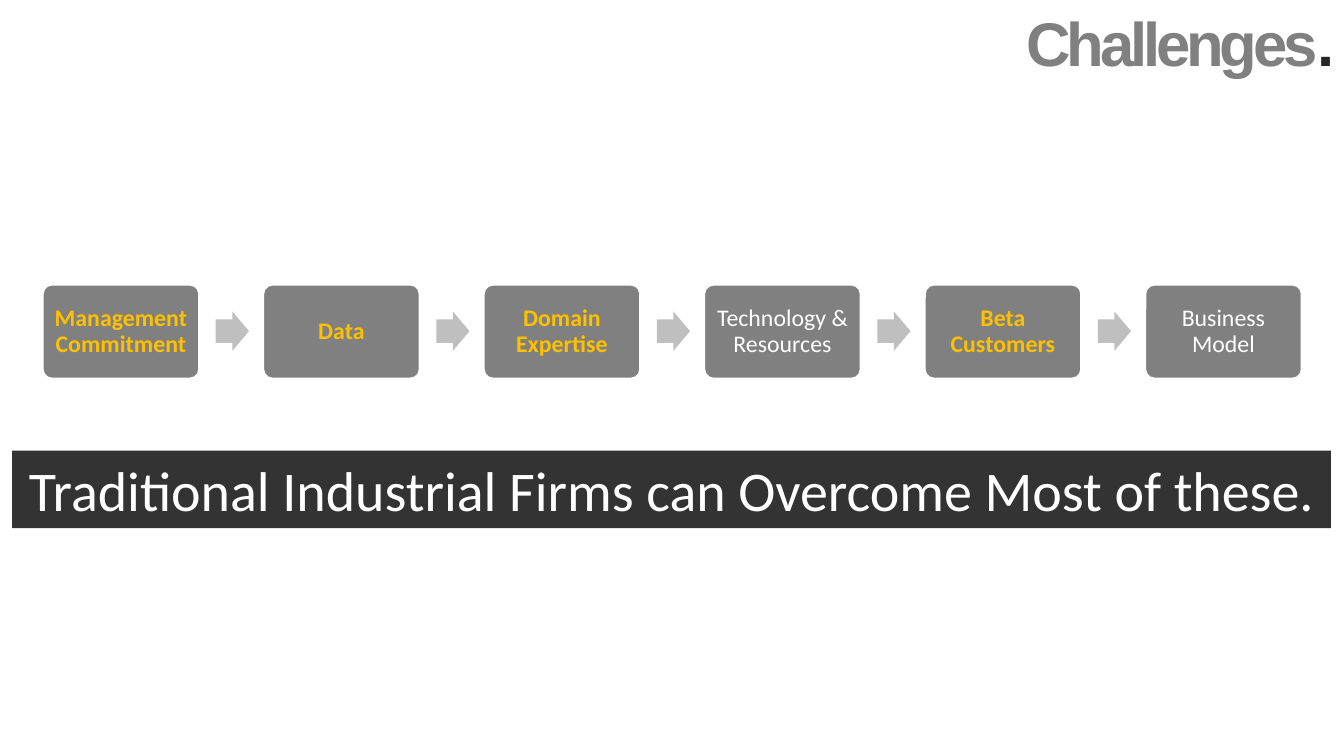
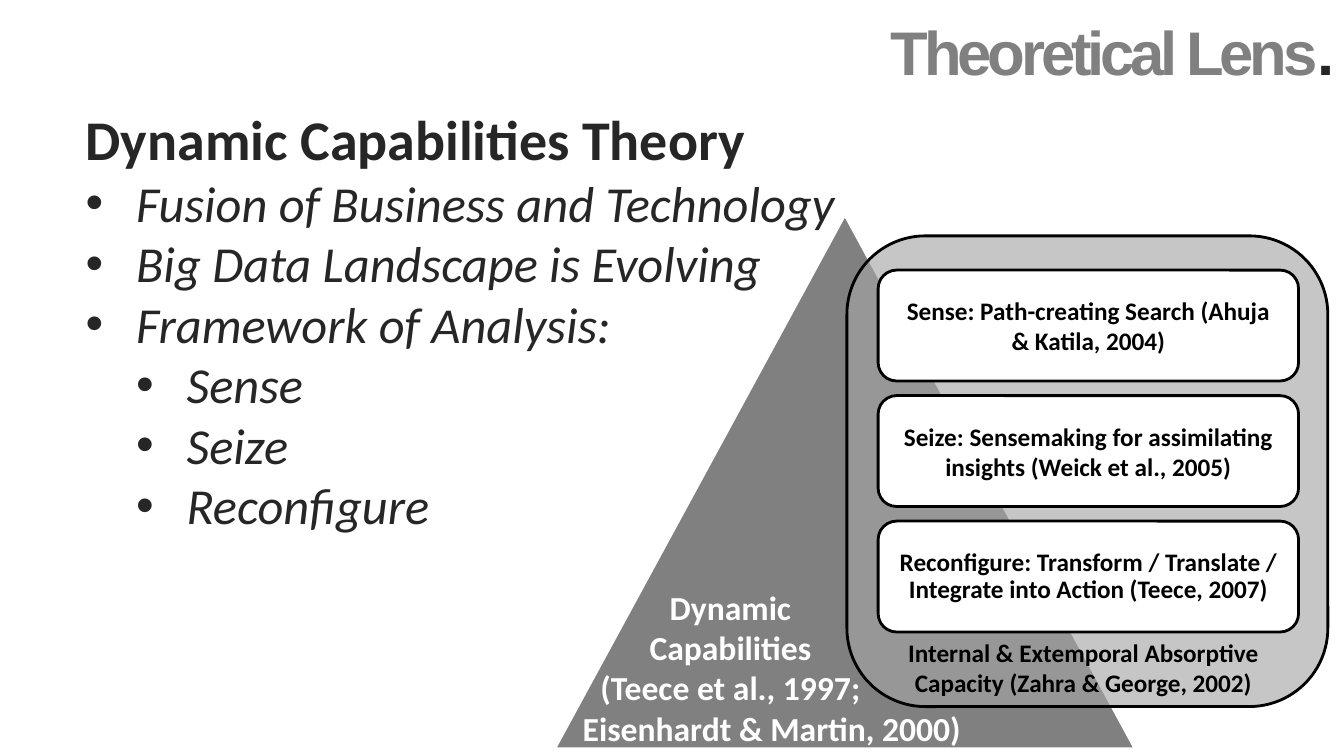
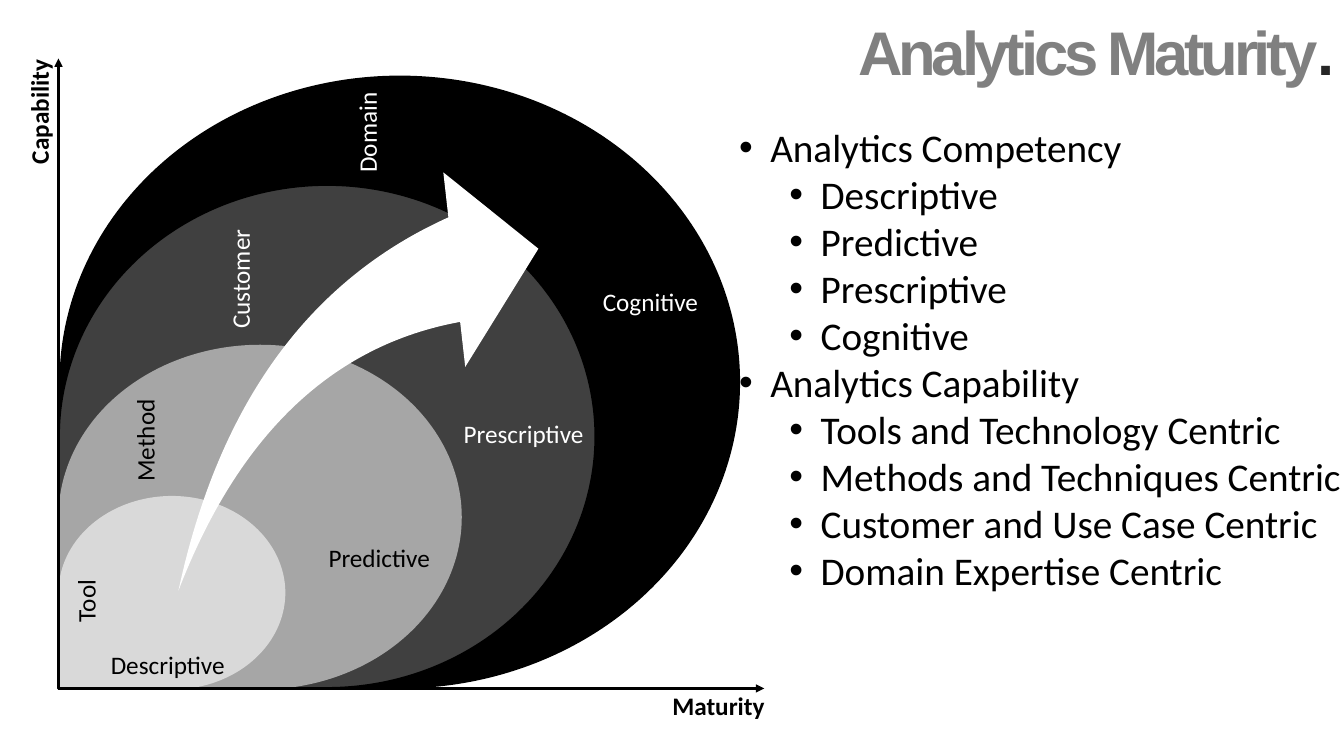
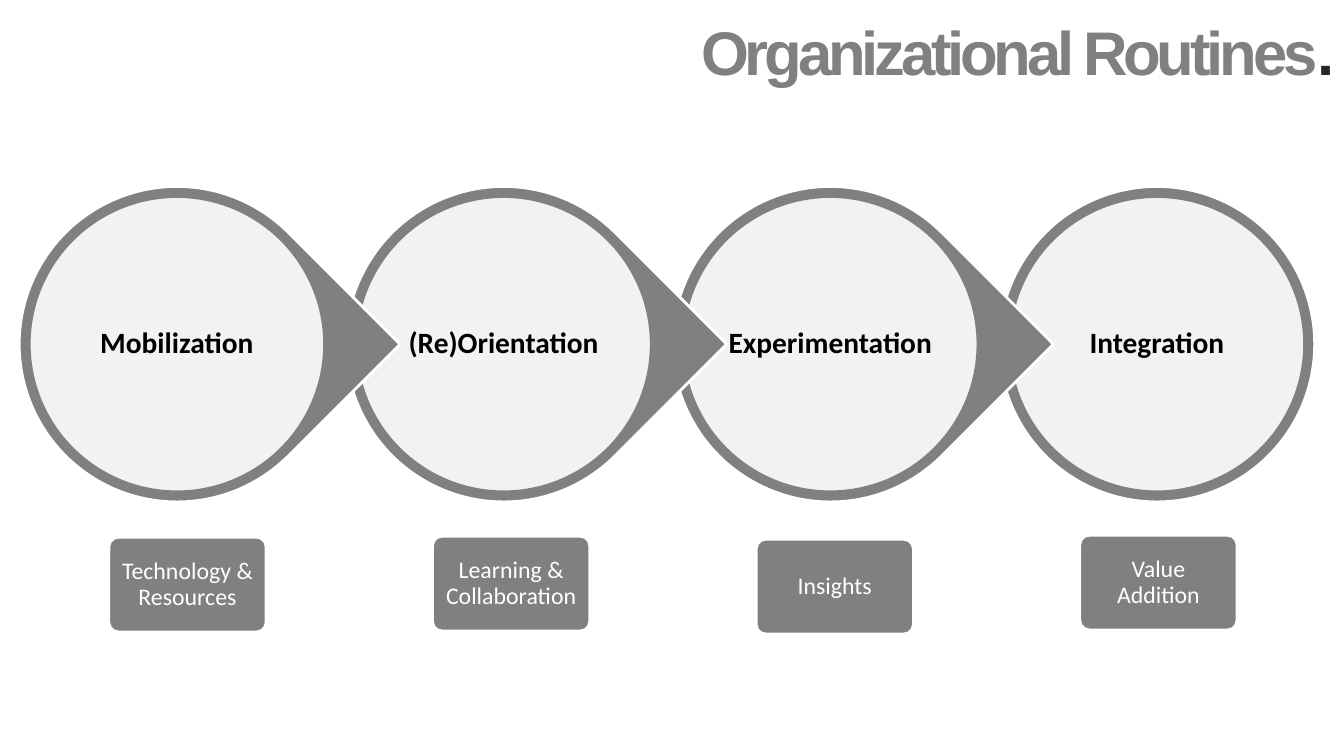
from lxml.etree import SubElement
from pptx import Presentation
from pptx.dml.color import RGBColor
from pptx.enum.shapes import MSO_CONNECTOR, MSO_SHAPE as SHAPE
from pptx.enum.text import MSO_ANCHOR as ANCHOR, MSO_AUTO_SIZE, PP_ALIGN as ALIGN
from pptx.oxml.ns import qn
from pptx.util import Inches, Pt

COLORS = {
    "white": "FFFFFF", "black": "000000", "ink": "262626", "grey": "808080",
    "silver": "BFBFBF", "panel": "A6A6A6", "charcoal": "404040",
    "pale": "D9D9D9", "gold": "FFC000",
}
RGB = {name: RGBColor.from_string(value) for name, value in COLORS.items()}

CHIP = {"size": Pt(17)}
CHIP_BOLD = {"size": Pt(17), "bold": True}
LABEL = {"size": Pt(18)}
LABEL_BOLD = {"size": Pt(18), "bold": True}
TITLE = {"size": Pt(44), "bold": True, "name": "Arial"}


def write(tf, lines, color, font, margin=None, **para):
    tf.auto_size = MSO_AUTO_SIZE.NONE
    if margin is not None:
        for side in ("left", "right", "top", "bottom"):
            setattr(tf, "margin_" + side, Inches(margin))
    for i, line in enumerate(lines):
        p = tf.paragraphs[0] if i == 0 else tf.add_paragraph()
        for key, value in para.items():
            setattr(p, key, value)
        r = p.add_run()
        r.text = line
        r.font.color.rgb = RGB[color]
        for key, value in {"name": "Calibri", **font}.items():
            setattr(r.font, key, value)


def add(s, kind, box, fill, line=None, alpha=None, adj=()):
    sp = s.shapes.add_shape(kind, *map(Inches, box))
    sp.shadow.inherit = False
    sp.fill.solid()
    sp.fill.fore_color.rgb = RGB[fill]
    if alpha:
        clr = sp.element.spPr.find(".//" + qn("a:srgbClr"))
        SubElement(clr, qn("a:alpha"), val=str(alpha * 1000))
    if line:
        sp.line.color.rgb = RGB[line]
        sp.line.width = Pt(2)
    else:
        sp.line.fill.background()
    for i, value in enumerate(adj):
        sp.adjustments[i] = value
    sp.text_frame.word_wrap = True
    return sp


prs = Presentation()
prs.slide_width, prs.slide_height = Inches(13.33), Inches(7.5)

slides = []
for title, layout, top in [
    ("Challenges", 5, 0),
    ("Theoretical Lens", 1, 0.08),
    ("Analytics Maturity", 1, 0.08),
    ("Organizational Routines", 5, 0.08),
]:
    s = prs.slides.add_slide(prs.slide_layouts[layout])
    sp = s.shapes.title
    sp.left, sp.top, sp.width, sp.height = map(Inches, (3.42, top, 9.92, 0.84))
    write(sp.text_frame, [title], "grey", TITLE, alignment=ALIGN.RIGHT)
    r = sp.text_frame.paragraphs[0].add_run()
    r.text = "."
    r.font.color.rgb = RGB["ink"]
    for key, value in TITLE.items():
        setattr(r.font, key, value)
    for r in sp.text_frame.paragraphs[0].runs:
        r.font._element.set("spc", "-300")
    slides.append(s)
challenges, lens, maturity, routines = slides

for s, box, color, size, indent, step, lines in [
    (lens, (0.75, 0.99, 10.83, 4.41), "ink", 36, 0.5, 0.5, [
        (None, "Dynamic Capabilities Theory"),
        (0, "Fusion of Business and Technology"),
        (0, "Big Data Landscape is Evolving"),
        (0, "Framework of Analysis:"),
        (1, "Sense"), (1, "Seize"), (1, "Reconfigure"),
    ]),
    (maturity, (7.23, 1.17, 6.24, 4.81), "black", 28, 0.31, 0.5, [
        (0, "Analytics Competency"),
        (1, "Descriptive"), (1, "Predictive"), (1, "Prescriptive"), (1, "Cognitive"),
        (0, "Analytics Capability"),
        (1, "Tools and Technology Centric"),
        (1, "Methods and Techniques Centric"),
        (1, "Customer and Use Case Centric"),
        (1, "Domain Expertise Centric"),
    ]),
]:
    sp = s.placeholders[1]
    sp.left, sp.top, sp.width, sp.height = map(Inches, box)
    tf = sp.text_frame
    write(tf, [text for _, text in lines], color,
          {"size": Pt(size), "italic": s is lens}, space_before=Pt(0))
    for p, (level, _) in zip(tf.paragraphs, lines):
        pPr = p._p.get_or_add_pPr()
        if level is None:
            for key, value in {"size": Pt(40), "bold": True, "italic": False}.items():
                setattr(p.runs[0].font, key, value)
            pPr.set("marL", "0")
            pPr.set("indent", "0")
            SubElement(pPr, qn("a:buNone"))
            continue
        p.level = level
        pPr.set("marL", str(Inches(indent + step * level)))
        pPr.set("indent", str(-Inches(indent)))
        SubElement(pPr, qn("a:buFont"), typeface="Arial")
        SubElement(pPr, qn("a:buChar"), char="•")

steps = [
    ("Management Commitment", True), ("Data", True), ("Domain Expertise", True),
    ("Technology & Resources", False), ("Beta Customers", True), ("Business Model", False),
]
chips = [(challenges, 0.42 + 2.187 * i, 2.82, text, bold)
         for i, (text, bold) in enumerate(steps)]
outcomes = [("Technology & Resources", 5.33), ("Learning & Collaboration", 5.32),
            ("Insights", 5.35), ("Value Addition", 5.31)]
chips += [(routines, 1.08 + 3.21 * i, y, text, False)
          for i, (text, y) in enumerate(outcomes)]
for s, x, y, text, bold in chips:
    sp = add(s, SHAPE.ROUNDED_RECTANGLE, (x, y, 1.56, 0.94), "grey", "white", adj=[0.1])
    write(sp.text_frame, [text], "gold" if bold else "white",
          CHIP_BOLD if bold else CHIP, 0.07, alignment=ALIGN.CENTER, line_spacing=0.9)

for i in range(len(steps) - 1):
    add(challenges, SHAPE.RIGHT_ARROW, (2.14 + 2.187 * i, 3.09, 0.33, 0.39),
        "silver", adj=[0.6, 0.5])
band = add(challenges, SHAPE.RECTANGLE, (0.12, 4.47, 13.08, 0.77), "black", alpha=80)
write(band.text_frame, ["Traditional Industrial Firms can Overcome Most of these."],
      "white", {"size": Pt(40)}, alignment=ALIGN.CENTER)

add(lens, SHAPE.ISOSCELES_TRIANGLE, (5.5, 2.13, 5.76, 5.3), "grey", "white")
tb = lens.shapes.add_textbox(*map(Inches, (4.83, 5.77, 4.83, 1.72)))
tb.text_frame.word_wrap = True
write(tb.text_frame, ["Dynamic", "Capabilities", "(Teece et al., 1997;",
                      "Eisenhardt & Martin, 2000)"],
      "white", {"size": Pt(24), "bold": True}, alignment=ALIGN.CENTER)
pPr = tb.text_frame.paragraphs[-1]._p.get_or_add_pPr()
pPr.set("marL", str(Inches(0.82)))

add(lens, SHAPE.ROUNDED_RECTANGLE, (8.4, 2.34, 4.77, 4.67), "panel", "black", alpha=63)
tb = lens.shapes.add_textbox(*map(Inches, (8.83, 6.27, 3.83, 0.71)))
tb.text_frame.word_wrap = True
write(tb.text_frame, ["Internal & Extemporal Absorptive Capacity (Zahra & George, 2002)"],
      "black", LABEL_BOLD, alignment=ALIGN.CENTER)
for i, (text, spacing) in enumerate([
    ("Sense: Path-creating Search (Ahuja & Katila, 2004)", 1.0),
    ("Seize: Sensemaking for assimilating insights (Weick et al., 2005)", 1.0),
    ("Reconfigure: Transform / Translate / Integrate into Action (Teece, 2007)", 0.9),
]):
    card = add(lens, SHAPE.ROUNDED_RECTANGLE, (8.71, 2.68 + 1.245 * i, 4.17, 1.1),
               "white", "black")
    write(card.text_frame, [text], "black", LABEL_BOLD, 0.15,
          alignment=ALIGN.CENTER, line_spacing=spacing)

for box, fill, line in [
    ((0.59, 0.75, 6.75, 6.08), "black", None),
    ((0.58, 1.83, 5.33, 5), "charcoal", "black"),
    ((0.58, 3.42, 4, 3.42), "panel", None),
    ((0.58, 4.92, 2.25, 1.92), "pale", None),
]:
    add(maturity, SHAPE.TEAR, box, fill, line).rotation = 180

for x, y in [(0.58, 0.58), (7.58, 6.83)]:
    axis = maturity.shapes.add_connector(
        MSO_CONNECTOR.STRAIGHT, *map(Inches, (0.58, 6.83, x, y)))
    axis.line.color.rgb = RGB["black"]
    axis.line.width = Pt(2)
    SubElement(axis.element.spPr.find(qn("a:ln")), qn("a:tailEnd"), type="triangle")
    SubElement(axis.element.spPr, qn("a:effectLst"))

for text, x, y, w, color, font, angle in [
    ("Maturity", 6.57, 6.8, 1.13, "black", LABEL_BOLD, 0),
    ("Capability", -0.24, 0.9, 1.25, "black", LABEL_BOLD, 270),
    ("Descriptive", 1, 6.39, 1.35, "black", LABEL, 0),
    ("Predictive", 3.16, 5.33, 1.22, "black", LABEL, 0),
    ("Prescriptive", 4.5, 4.1, 1.43, "white", LABEL, 0),
    ("Cognitive", 5.88, 2.79, 1.18, "white", LABEL, 0),
    ("Tool", 0.48, 5.7, 0.74, "black", LABEL, 270),
    ("Method", 0.92, 4.16, 1.03, "black", LABEL, 270),
    ("Customer", 1.78, 2.56, 1.2, "white", LABEL, 270),
    ("Domain", 3.14, 1.11, 1, "white", LABEL, 270),
]:
    tb = maturity.shapes.add_textbox(*map(Inches, (x, y, w, 0.4)))
    tb.rotation = angle
    tb.text_frame.word_wrap = False
    write(tb.text_frame, [text], color, font)
add(maturity, SHAPE.SWOOSH_ARROW, (1.77, 1.71, 3.57, 4.15), "white", adj=[0.25, 0.25])

phases = ["Mobilization", "(Re)Orientation", "Experimentation", "Integration"]
for i, text in reversed(list(enumerate(phases))):
    x = 0.19 + 3.24 * i
    last = i == len(phases) - 1
    ring = add(routines, SHAPE.OVAL if last else SHAPE.TEAR, (x, 1.85, 3.13, 3.13),
               "grey", "white")
    ring.rotation = 0 if last else 45
    disc = add(routines, SHAPE.OVAL, (x + 0.1, 1.95, 2.93, 2.93), "white", "grey", alpha=90)
    disc.text_frame.vertical_anchor = ANCHOR.MIDDLE
    disc.text_frame.word_wrap = False
    write(disc.text_frame, [text], "black", {"size": Pt(21), "bold": True}, 0,
          alignment=ALIGN.CENTER, line_spacing=0.9)

prs.save("out.pptx")
